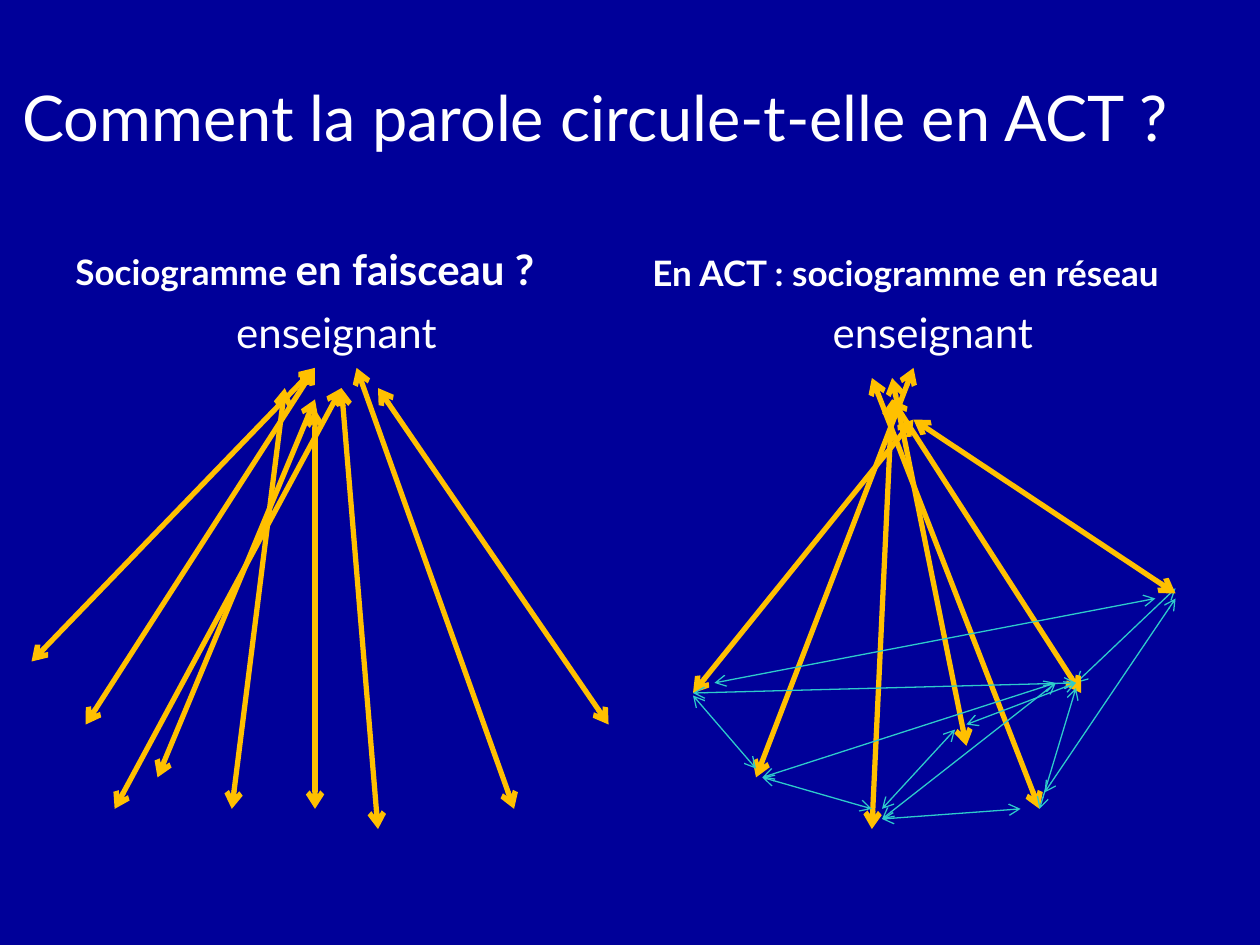
from lxml.etree import SubElement
from pptx import Presentation
from pptx.dml.color import RGBColor
from pptx.enum.shapes import MSO_CONNECTOR as Connector
from pptx.enum.text import MSO_ANCHOR as Anchor, PP_ALIGN as Align
from pptx.oxml.ns import qn
from pptx.util import Inches, Pt

COLORS = {"background": "000099", "text": "FFFFFF", "teacher": "FFC000", "pupils": "2ECBCB"}
WIDTHS = {"teacher": 3, "pupils": 0.75}
FONT = "Lato"
WIDE, HIGH = 10, 7.5

# Content: each text is a list of (words, size) spans
TITLE = [("Comment la parole circule-t-elle en ACT ?", 36)]
BEAM_HEADING = [("Sociogramme ", 20), ("en faisceau ?", 24)]
NETWORK_HEADING = [("En ACT : sociogramme en réseau", 20)]
TEACHER = [("enseignant", 24)]

# Exchanges: (x, y) of both ends, in inches
BEAM = [
    ((2.5, 2.92), (0.25, 5.25)), ((2.71, 3.08), (0.91, 6.42)),
    ((2.5, 3.17), (1.25, 6.17)), ((2.26, 3.08), (1.84, 6.42)),
    ((2.5, 2.92), (0.68, 5.75)), ((2.5, 3.25), (2.5, 6.42)),
    ((2.71, 3.08), (3, 6.58)), ((2.83, 2.92), (4.08, 6.42)),
    ((3, 3.08), (4.83, 5.75)),
]
NETWORK_TEACHER = [
    ((7.08, 3.17), (8.58, 5.5)), ((7.08, 3), (7.67, 5.92)),
    ((6.92, 3), (8.25, 6.42)), ((7.08, 3.17), (6.92, 6.58)),
    ((7.25, 3.33), (5.5, 5.5)), ((7.25, 2.92), (6, 6.17)),
    ((7.25, 3.33), (9.33, 4.71)),
]
PUPILS_BEHIND = [((8.54, 5.42), (9.33, 4.67))]
PUPILS = [
    ((8.54, 5.46), (8.25, 6.42)), ((8.38, 5.42), (6.05, 6.17)),
    ((8.54, 5.42), (7.67, 5.75)), ((8.54, 5.42), (5.5, 5.5)),
    ((6.05, 6.17), (6.92, 6.42)), ((8.38, 5.42), (7, 6.5)),
    ((8.1, 6.42), (7, 6.5)), ((7.58, 5.79), (7, 6.42)),
    ((9.17, 4.75), (5.67, 5.42)), ((9.33, 4.75), (8.29, 6.29)),
    ((6, 6.1), (5.5, 5.52)),
]


def add_text(page, spans, left, top, width, height, *, bold=False,
             anchor=Anchor.TOP, align=Align.LEFT, indent=0):
    box = page.shapes.add_textbox(*map(Inches, (left, top, width, height)))
    frame = box.text_frame
    frame.word_wrap = True
    frame.vertical_anchor = anchor
    para = frame.paragraphs[0]
    para.alignment = align
    if indent:
        properties = para._p.get_or_add_pPr()
        properties.set("marL", str(Inches(indent)))
        properties.set("indent", "0")
    for words, size in spans:
        span = para.add_run()
        span.text = words
        span.font.name = FONT
        span.font.size = Pt(size)
        span.font.bold = bold
        span.font.color.rgb = RGBColor.from_string(COLORS["text"])


def add_exchanges(page, exchanges, speaker):
    for start, end in exchanges:
        arrow = page.shapes.add_connector(Connector.STRAIGHT, *map(Inches, start + end))
        arrow.line.width = Pt(WIDTHS[speaker])
        arrow.line.color.rgb = RGBColor.from_string(COLORS[speaker])
        outline = arrow.line._get_or_add_ln()
        for tip in ("a:headEnd", "a:tailEnd"):
            SubElement(outline, qn(tip), type="arrow")
        SubElement(arrow._element.spPr, qn("a:effectLst"))


def main():
    deck = Presentation()
    deck.slide_width, deck.slide_height = Inches(WIDE), Inches(HIGH)
    page = deck.slides.add_slide(deck.slide_layouts[6])
    fill = page.background.fill
    fill.solid()
    fill.fore_color.rgb = RGBColor.from_string(COLORS["background"])

    # Title and the two columns
    left, right, column = 0.5, 5.08, 4.42
    heading_top, heading_high = 1.68, 0.7
    body_top = heading_top + heading_high
    add_text(page, TITLE, 0.08, 0.3, WIDE - 0.08, 1.25, anchor=Anchor.MIDDLE)
    add_text(page, BEAM_HEADING, left, heading_top, column, heading_high,
             bold=True, anchor=Anchor.BOTTOM)
    add_text(page, TEACHER, left, body_top, column - 0.08, 4.32, align=Align.CENTER)
    add_text(page, NETWORK_HEADING, right, heading_top, WIDE - right, heading_high,
             bold=True, anchor=Anchor.BOTTOM)
    add_text(page, TEACHER, right + 0.08, body_top, WIDE - right - 0.08, 4.54, indent=1.35)

    # Arrows, from back to front
    add_exchanges(page, BEAM, "teacher")
    add_exchanges(page, PUPILS_BEHIND, "pupils")
    add_exchanges(page, NETWORK_TEACHER, "teacher")
    add_exchanges(page, PUPILS, "pupils")

    deck.save("out.pptx")


if __name__ == "__main__":
    main()
